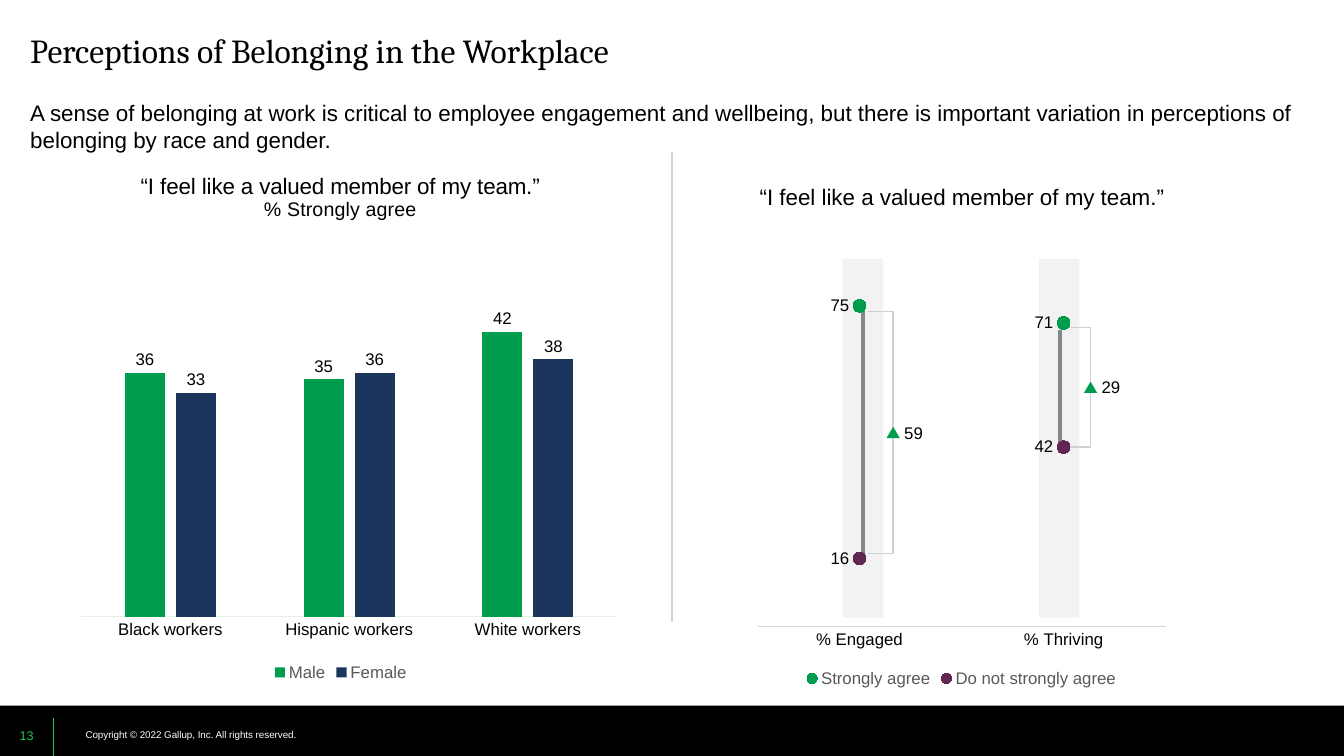
import pptx
import pptx.chart.data
import pptx.dml.color
import pptx.enum.chart
import pptx.enum.shapes
import pptx.enum.text
import pptx.oxml
import pptx.oxml.ns
import pptx.util

Pt = pptx.util.Pt
CHART = pptx.enum.chart
SHAPE = pptx.enum.shapes.MSO_SHAPE
ALIGN = pptx.enum.text.PP_ALIGN
ANCHOR = pptx.enum.text.MSO_ANCHOR

BLACK, WHITE, GREEN, LIME = "000000", "FFFFFF", "009D4F", "16C64F"
NAVY, PLUM, BAND, RULE, STEM, LEGEND = "1B355D", "612651", "F2F2F2", "CFD2D3", "85888A", "595959"
QUOTE = "“I feel like a valued member of my team.”"


def rgb(color):
    return pptx.dml.color.RGBColor.from_string(color)


def element(xml):
    """Parse a fragment whose tags use the a: and c: prefixes."""
    head, tail = xml.split(">", 1)
    slash = "/" if head.endswith("/") else ""
    return pptx.oxml.parse_xml(f"{head.rstrip('/')} {pptx.oxml.ns.nsdecls('a', 'c')}{slash}>{tail}")


def set_layout(parent, index, target="", **box):
    """Give a chart part a manual position, in fractions of the chart."""
    for old in parent.findall(pptx.oxml.ns.qn("c:layout")):
        parent.remove(old)
    inner = f'<c:layoutTarget val="{target}"/>' if target else ""
    modes = '<c:xMode val="edge"/><c:yMode val="edge"/>'
    sizes = "".join(f'<c:{key} val="{value}"/>' for key, value in box.items())
    parent.insert(index, element(
        f"<c:layout><c:manualLayout>{inner}{modes}{sizes}</c:manualLayout></c:layout>"))


class Deck:
    def __init__(self, font):
        self.font_name = font
        self.prs = pptx.Presentation()
        self.prs.slide_width, self.prs.slide_height = Pt(960), Pt(540)
        self.s = self.prs.slides.add_slide(self.prs.slide_layouts[6])

    def style(self, font, size, color=BLACK, name=None):
        font.name, font.size, font.bold = name or self.font_name, Pt(size), False
        font.color.rgb = rgb(color)

    def shape(self, kind, x, y, w, h, fill):
        sp = self.s.shapes.add_shape(kind, Pt(x), Pt(y), Pt(w), Pt(h))
        sp.shadow.inherit = False
        sp.fill.solid()
        sp.fill.fore_color.rgb = rgb(fill)
        sp.line.fill.background()

    def line(self, x1, y1, x2, y2, color=RULE, width=1):
        cxn = self.s.shapes.add_connector(
            pptx.enum.shapes.MSO_CONNECTOR.STRAIGHT, Pt(x1), Pt(y1), Pt(x2), Pt(y2))
        cxn.line.color.rgb = rgb(color)
        cxn.line.width = Pt(width)
        cxn._element.spPr.append(element("<a:effectLst/>"))

    def text(self, x, y, w, h, text, size, color=BLACK, name=None, align=ALIGN.LEFT,
             anchor=ANCHOR.TOP, insets=(7.2, 3.6, 7.2, 3.6), wrap=True):
        tf = self.s.shapes.add_textbox(Pt(x), Pt(y), Pt(w), Pt(h)).text_frame
        tf.word_wrap, tf.vertical_anchor = wrap, anchor
        tf.margin_left, tf.margin_top, tf.margin_right, tf.margin_bottom = map(Pt, insets)
        p = tf.paragraphs[0]
        p.alignment = align
        r = p.add_run()
        r.text = text
        self.style(r.font, size, color, name)

    def bracket(self, x, top, bottom, gap):
        """Bracket a gap between two markers and label it with a triangle."""
        right, middle = x + 18, (top + bottom) / 2
        for y in (top, bottom):
            self.line(x, y, right, y)
        self.line(right, top, right, bottom)
        self.shape(SHAPE.ISOSCELES_TRIANGLE, right - 4.7, middle - 4, 9.4, 8, GREEN)
        self.text(right + 0.8, middle - 10.8, 40, 21.6, gap, 12)

    def chart(self, kind, box, categories, series, top, axis_color, plot_box):
        data = pptx.chart.data.CategoryChartData()
        data.categories = categories
        for name, values in series:
            data.add_series(name, values)
        chart = self.s.shapes.add_chart(kind, *map(Pt, box), data).chart
        self.style(chart.font, 10)
        chart.has_title = False
        chart.has_legend = True
        chart.legend.position = CHART.XL_LEGEND_POSITION.BOTTOM
        chart.legend.include_in_layout = False
        self.style(chart.legend.font, 12, LEGEND)
        values_axis, axis = chart.value_axis, chart.category_axis
        values_axis.minimum_scale, values_axis.maximum_scale = 0, top
        values_axis.has_major_gridlines = False
        values_axis.visible = False
        axis.major_tick_mark = CHART.XL_TICK_MARK.NONE
        axis.format.line.color.rgb = rgb(axis_color)
        axis.format.line.width = Pt(0.75)
        self.style(axis.tick_labels.font, 12)
        root = chart._chartSpace.chart
        set_layout(root.plotArea, 0, "inner", **plot_box)
        clear = "<c:spPr><a:noFill/><a:ln><a:noFill/></a:ln></c:spPr>"
        root.plotArea.append(element(clear))
        root.addnext(element(clear))
        return chart

    def value_labels(self, series, position):
        labels = series.data_labels
        labels.show_value = True
        labels.position = position
        self.style(labels.font, 12)

    def column_chart(self, colors, title, title_box, **chart_args):
        chart = self.chart(CHART.XL_CHART_TYPE.COLUMN_CLUSTERED, **chart_args)
        plot = chart.plots[0]
        plot.gap_width, plot.overlap, plot.vary_by_categories = 219, -27, False
        for series, color in zip(plot.series, colors):
            series.format.fill.solid()
            series.format.fill.fore_color.rgb = rgb(color)
            self.value_labels(series, CHART.XL_LABEL_POSITION.OUTSIDE_END)
        tf = chart.chart_title.text_frame
        for i, (text, size) in enumerate(title):
            p = tf.add_paragraph() if i else tf.paragraphs[0]
            r = p.add_run()
            r.text = text
            self.style(r.font, size)
        chart.chart_title.include_in_layout = False
        set_layout(chart.chart_title._element, 1, **title_box)

    def marker_chart(self, colors, **chart_args):
        chart = self.chart(CHART.XL_CHART_TYPE.LINE_MARKERS, **chart_args)
        plot = chart.plots[0]
        plot.vary_by_categories = False
        for series, color in zip(plot.series, colors):
            series.smooth = False
            series.format.line.fill.background()
            marker = series.marker
            marker.style, marker.size = CHART.XL_MARKER_STYLE.CIRCLE, 9
            marker.format.fill.solid()
            marker.format.fill.fore_color.rgb = rgb(color)
            marker.format.line.color.rgb = rgb(color)
            self.value_labels(series, CHART.XL_LABEL_POSITION.LEFT)


def main():
    deck = Deck("Arial")

    # Footer
    deck.shape(SHAPE.RECTANGLE, 0, 504, 960, 36, BLACK)
    deck.text(54, 517, 270, 16, "Copyright © 2022 Gallup, Inc. All rights reserved.", 7, WHITE,
              anchor=ANCHOR.MIDDLE, wrap=False)
    deck.line(38, 540, 38, 512.6, LIME, 0.75)
    deck.text(0, 511, 38, 29, "13", 9, LIME, align=ALIGN.CENTER, anchor=ANCHOR.MIDDLE)

    # Heading
    deck.text(0, 0, 960, 65.5, "Perceptions of Belonging in the Workplace", 24, name="Cambria",
              insets=(21.6, 25.2, 21.6, 10.8))
    deck.text(0, 67, 960, 57,
              "A sense of belonging at work is critical to employee engagement and wellbeing, "
              "but there is important variation in perceptions of belonging by race and gender.",
              16, insets=(21.6, 3.6, 7.2, 14.4))

    # Belonging by race and gender
    deck.column_chart(
        colors=(GREEN, NAVY),
        title=((QUOTE, 16), ("% Strongly agree", 14)),
        title_box=dict(x=0.14, y=0.02),
        box=(41.8, 113.8, 403.2, 375.8),
        categories=("Black workers", "Hispanic workers", "White workers"),
        series=(("Male", (36, 35, 42)), ("Female", (33, 36, 38))),
        top=50, axis_color="E4F2E1", plot_box=dict(x=0.04, y=0.225, w=0.95, h=0.645))
    deck.line(480, 108.7, 480, 444.2)

    # Belonging by engagement and wellbeing
    deck.text(530.6, 127.4, 313.2, 26.6, QUOTE, 16, align=ALIGN.CENTER)
    for x in (602, 742.3):
        deck.shape(SHAPE.RECTANGLE, x, 185, 28.8, 256.3, BAND)
    for x, top, bottom in ((757.4, 235.4, 323.3), (616.3, 218.9, 396)):
        deck.line(x, top, x, bottom, STEM, 3)
    deck.bracket(620, 222.5, 395.3, "59")
    deck.bracket(761, 234, 319.3, "29")
    deck.marker_chart(
        colors=(GREEN, PLUM),
        box=(535, 197.3, 303.8, 296.6),
        categories=("% Engaged", "% Thriving"),
        series=(("Strongly agree", (75, 71)), ("Do not strongly agree", (16, 42))),
        top=80, axis_color="D9D9D9", plot_box=dict(x=0.02, y=0.02, w=0.96, h=0.825))

    deck.prs.save("out.pptx")


if __name__ == "__main__":
    main()
